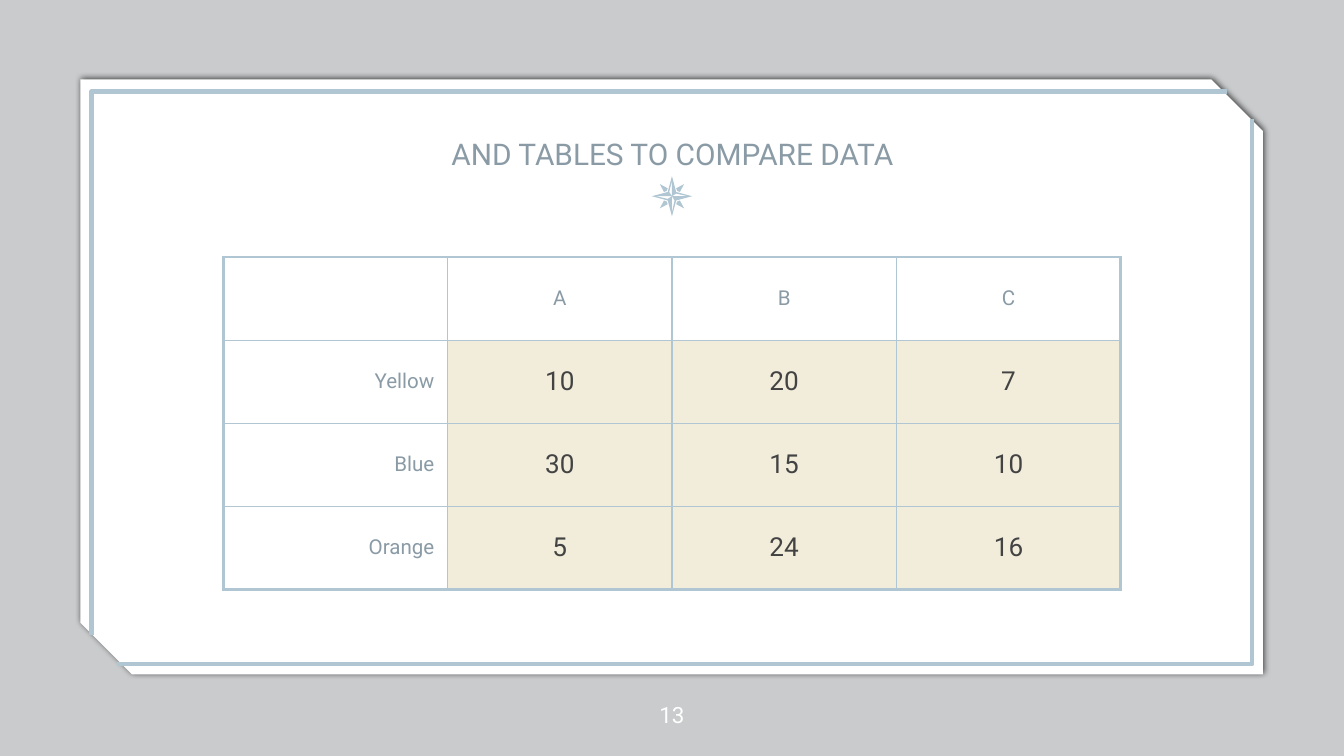
"""Build a slide with a framed card, a compass star and a comparison table."""
from lxml import etree
from pptx import Presentation
from pptx.dml.color import RGBColor
from pptx.enum.shapes import MSO_SHAPE
from pptx.enum.text import MSO_ANCHOR, PP_ALIGN
from pptx.oxml import parse_xml
from pptx.oxml.ns import nsdecls, qn
from pptx.util import Cm, Pt

RECTANGLE = MSO_SHAPE.RECTANGLE
SNIPPED = MSO_SHAPE.SNIP_2_DIAG_RECTANGLE
CENTER, RIGHT = PP_ALIGN.CENTER, PP_ALIGN.RIGHT
MIDDLE, BOTTOM = MSO_ANCHOR.MIDDLE, MSO_ANCHOR.BOTTOM
WHITE, BLUE, GREY, DARK, CREAM = "FFFFFF", "B0C6D3", "8A9BA6", "434343", "F2EDDA"


def paint(fill, colour):
    fill.solid()
    fill.fore_color.rgb = RGBColor.from_string(colour)


def write(frame, text, size=11, colour=GREY, align=CENTER):
    paragraph = frame.paragraphs[0]
    paragraph.alignment = align
    run = paragraph.add_run()
    run.text = text
    run.font.name = "Roboto"
    run.font.size = Pt(size)
    paint(run.font.fill, colour)


presentation = Presentation()
presentation.slide_width, presentation.slide_height = Cm(25.4), Cm(14.29)
slide = presentation.slides.add_slide(presentation.slide_layouts[6])
shapes = slide.shapes
paint(slide.background.fill, WHITE)

backdrop = shapes.add_shape(RECTANGLE, 0, 0, Cm(25.4), Cm(14.29))
card = shapes.add_shape(SNIPPED, Cm(1.52), Cm(1.5), Cm(22.35), Cm(11.25))
card.adjustments[0], card.adjustments[1] = 0, 0.087
for shape, colour in ((backdrop, "040E11"), (card, WHITE)):
    shape.shadow.inherit = False
    paint(shape.fill, colour)
    shape.line.fill.background()
backdrop_colour = backdrop._element.spPr.find(qn("a:solidFill"))[0]
etree.SubElement(backdrop_colour, qn("a:alpha"), val="21000")
card._element.spPr.find(qn("a:effectLst")).append(parse_xml(
    f'<a:outerShdw {nsdecls("a")} blurRad="{Pt(3.4)}" dist="{Pt(0.8)}" dir="0" '
    'algn="bl" rotWithShape="0"><a:srgbClr val="000000"><a:alpha val="68000"/>'
    '</a:srgbClr></a:outerShdw>'))

frame_lines = [
    [(1.73, 12.01), (1.73, 1.73), (23.19, 1.73)],
    [(23.67, 2.25), (23.67, 12.55), (2.21, 12.55)],
]
for points in frame_lines:
    corners = [(Cm(x), Cm(y)) for x, y in points]
    builder = shapes.build_freeform(*corners[0], scale=1.0)
    builder.add_line_segments(corners[1:], close=False)
    frame_line = builder.convert_to_shape()
    frame_line.shadow.inherit = False
    frame_line.fill.background()
    paint(frame_line.line.fill, BLUE)
    frame_line.line.width = Pt(2.25)

quarter_turns = [(1, 0), (0, 1), (-1, 0), (0, -1)]
star_outline = []
star_holes = []
for cos, sin in quarter_turns:
    tip, notch, hole_tip, hole_side = [
        (x * cos - y * sin, x * sin + y * cos)
        for x, y in ((0, -0.38), (0.08, -0.08), (0, -0.3), (-0.05, -0.08))]
    star_outline += [tip, notch]
    star_holes.append([hole_tip, (0, 0), hole_side])
compass_parts = [
    [[(x * across, y * down)
      for x, y in ((0.23, 0.23), (0.15, 0.08), (0.1, 0.1), (0.08, 0.15))]]
    for across in (-1, 1) for down in (-1, 1)]
compass_parts.append([star_outline] + star_holes)
for contours in compass_parts:
    builder = None
    for contour in contours:
        corners = [(Cm(12.7 + x), Cm(3.71 + y)) for x, y in contour]
        if builder is None:
            builder = shapes.build_freeform(*corners[0], scale=1.0)
        else:
            builder.move_to(*corners[0])
        builder.add_line_segments(corners[1:], close=True)
    compass_part = builder.convert_to_shape()
    compass_part.shadow.inherit = False
    paint(compass_part.fill, BLUE)
    compass_part.line.fill.background()

text_boxes = [
    ("AND TABLES TO COMPARE DATA", 2.79, 1.73, 19.84, 16, GREY, BOTTOM),
    ("13", 11.94, 12.75, 1.52, 12, WHITE, MIDDLE),
]
for text, left, top, width, size, colour, anchor in text_boxes:
    frame = shapes.add_textbox(Cm(left), Cm(top), Cm(width), Cm(1.52)).text_frame
    frame.word_wrap = True
    frame.vertical_anchor = anchor
    frame.margin_left = frame.margin_right = 0
    frame.margin_top = frame.margin_bottom = 0
    write(frame, text, size=size, colour=colour)

rows = [
    ["", "A", "B", "C"],
    ["Yellow", "10", "20", "7"],
    ["Blue", "30", "15", "10"],
    ["Orange", "5", "24", "16"],
]
last = len(rows) - 1
table = shapes.add_table(4, 4, Cm(4.22), Cm(4.86), Cm(16.96), Cm(6.28)).table
table.first_row = table.horz_banding = False
for row_index, row in enumerate(rows):
    table.rows[row_index].height = Cm(1.57)
    table.columns[row_index].width = Cm(4.24)
    for column_index, text in enumerate(row):
        cell = table.cell(row_index, column_index)
        cell.vertical_anchor = MIDDLE
        cell.margin_left = cell.margin_right = Cm(0.25)
        cell.margin_top = cell.margin_bottom = Cm(0.18)
        is_value = row_index > 0 and column_index > 0
        if is_value:
            paint(cell.fill, CREAM)
            write(cell.text_frame, text, size=14, colour=DARK)
        else:
            cell.fill.background()
            if text:
                write(cell.text_frame, text, align=CENTER if row_index == 0 else RIGHT)
        edges = [("lnL", column_index == 0), ("lnR", column_index == last),
                 ("lnT", row_index == 0), ("lnB", row_index == last)]
        for position, (tag, is_outer) in enumerate(edges):
            cell._tc.get_or_add_tcPr().insert(position, parse_xml(
                f'<a:{tag} {nsdecls("a")} w="{Pt(1.5 if is_outer else 0.75)}">'
                f'<a:solidFill><a:srgbClr val="{BLUE}"/></a:solidFill></a:{tag}>'))

presentation.save("out.pptx")
